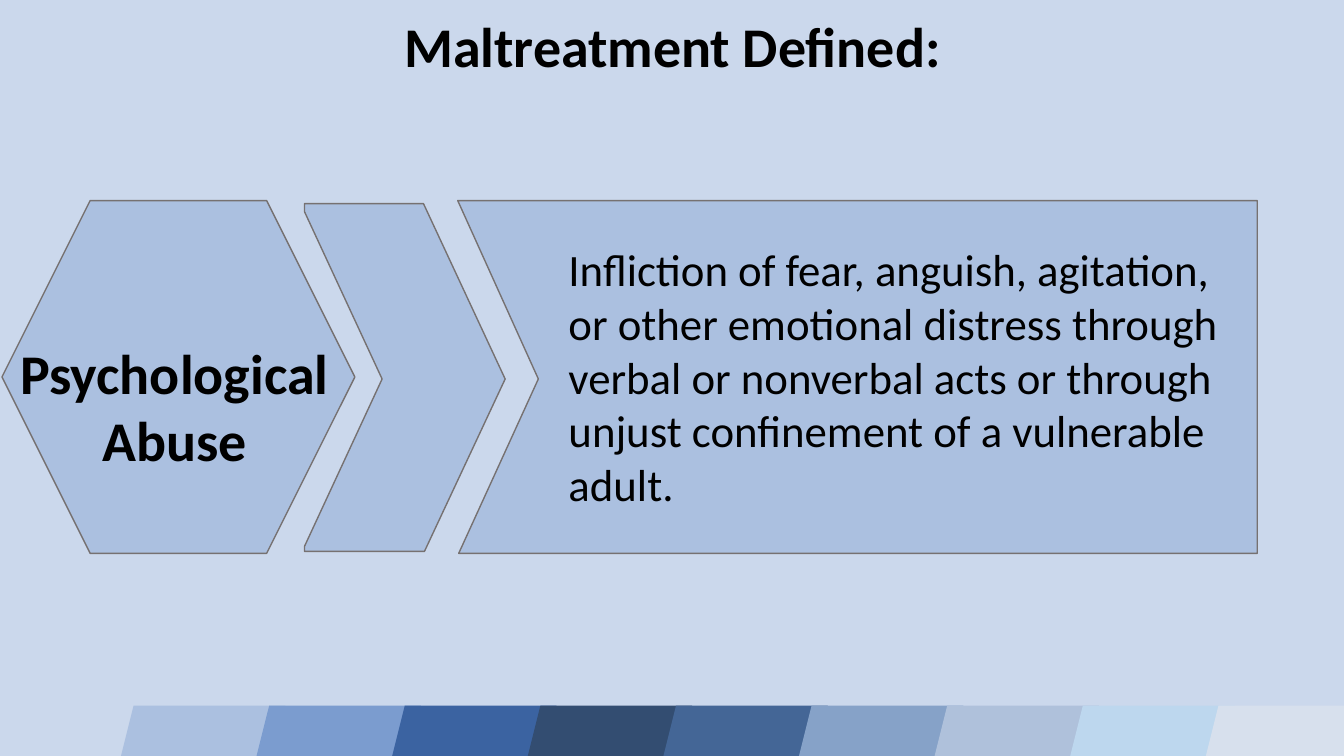
from pptx import Presentation
from pptx.dml.color import RGBColor
from pptx.enum.shapes import MSO_SHAPE as Preset
from pptx.enum.text import MSO_ANCHOR as Anchor, MSO_AUTO_SIZE as AutoSize, PP_ALIGN as Align
from pptx.util import Inches, Pt

BACKGROUND = "CBD8EC"
PANEL = "ABC0E0"
OUTLINE = "767171"
BAND = ["ABC0E0", "7B9CCF", "3B63A1", "334D71", "446696",
        "86A2C8", "AFC1DB", "BDD7EE", "D7E0ED"]


def paint(fill, color):
    fill.solid()
    fill.fore_color.rgb = RGBColor.from_string(color)


def style(shape, color, outline=None):
    shape.shadow.inherit = False
    paint(shape.fill, color)
    if outline:
        paint(shape.line.fill, outline)
        shape.line.width = Pt(1)
    else:
        shape.line.fill.background()


def write(shape, text, size=32, bold=False, align=Align.LEFT, anchor=Anchor.TOP, spacing=1.0):
    frame = shape.text_frame
    frame.word_wrap = True
    frame.auto_size = AutoSize.NONE
    frame.vertical_anchor = anchor
    frame.text = text
    for paragraph in frame.paragraphs:
        paragraph.alignment = align
        paragraph.line_spacing = spacing
        font = paragraph.runs[0].font
        font.name = "Calibri"
        font.size = Pt(size)
        font.bold = bold
        font.color.rgb = RGBColor.from_string("000000")


def add_text(slide, box, text, **text_format):
    write(slide.shapes.add_textbox(*map(Inches, box)), text, **text_format)


def add_outline(slide, left, top, points):
    corners = [(Inches(left + x), Inches(top + y)) for x, y in points]
    builder = slide.shapes.build_freeform(*corners[0])
    builder.add_line_segments(corners[1:], close=True)
    style(builder.convert_to_shape(), PANEL, OUTLINE)


def add_band(slide, left, top, width, height, pitch):
    for index, color in enumerate(BAND):
        box = (left + index * pitch, top, width, height)
        tile = slide.shapes.add_shape(Preset.PARALLELOGRAM, *map(Inches, box))
        style(tile, color)


def add_title(slide, left, top, width, height):
    title = slide.shapes.title
    title.left, title.top, title.width, title.height = map(Inches, (left, top, width, height))
    paint(title.fill, BACKGROUND)
    write(title, "Maltreatment Defined:", size=40, bold=True,
          align=Align.CENTER, anchor=Anchor.BOTTOM, spacing=0.9)


def add_term(slide, left, top, size):
    hexagon = slide.shapes.add_shape(Preset.HEXAGON, *map(Inches, (left, top, size, size)))
    style(hexagon, PANEL, OUTLINE)
    add_text(slide, (left + 0.01, top + 1.32, size - 0.1, 1.45), "Psychological\nAbuse",
             size=40, bold=True, align=Align.CENTER)


def add_chevron(slide, left, top, width, height):
    middle = 1.74
    add_outline(slide, left, top, [
        (0, 0), (1.18, 0), (width, middle), (1.19, height),
        (0, height), (0, height - 0.05), (0.77, middle), (0, 0.08)])


def add_definition(slide, left, top, width, height):
    add_outline(slide, left, top, [
        (0, 0), (width, 0), (width, height), (0.01, height), (0.8, 1.77)])
    add_text(slide, (left + 1, top + 0.36, 6.7, 2.79),
             "Infliction of fear, anguish, agitation, or other emotional distress through "
             "verbal or nonverbal acts or through unjust confinement of a vulnerable adult.")


def main():
    presentation = Presentation()
    presentation.slide_width = Inches(13.33)
    presentation.slide_height = Inches(7.5)
    slide = presentation.slides.add_slide(presentation.slide_layouts[5])
    paint(slide.background.fill, BACKGROUND)
    add_band(slide, 1.09, 7, 1.74, 0.94, pitch=1.345)
    add_term(slide, 0.02, 1.99, 3.5)
    add_chevron(slide, 3.02, 2.02, 1.99, 3.45)
    add_definition(slide, 4.54, 1.99, 7.93, 3.5)
    add_title(slide, 3.12, 0.14, 7.1, 0.7)
    presentation.save("out.pptx")


if __name__ == "__main__":
    main()
